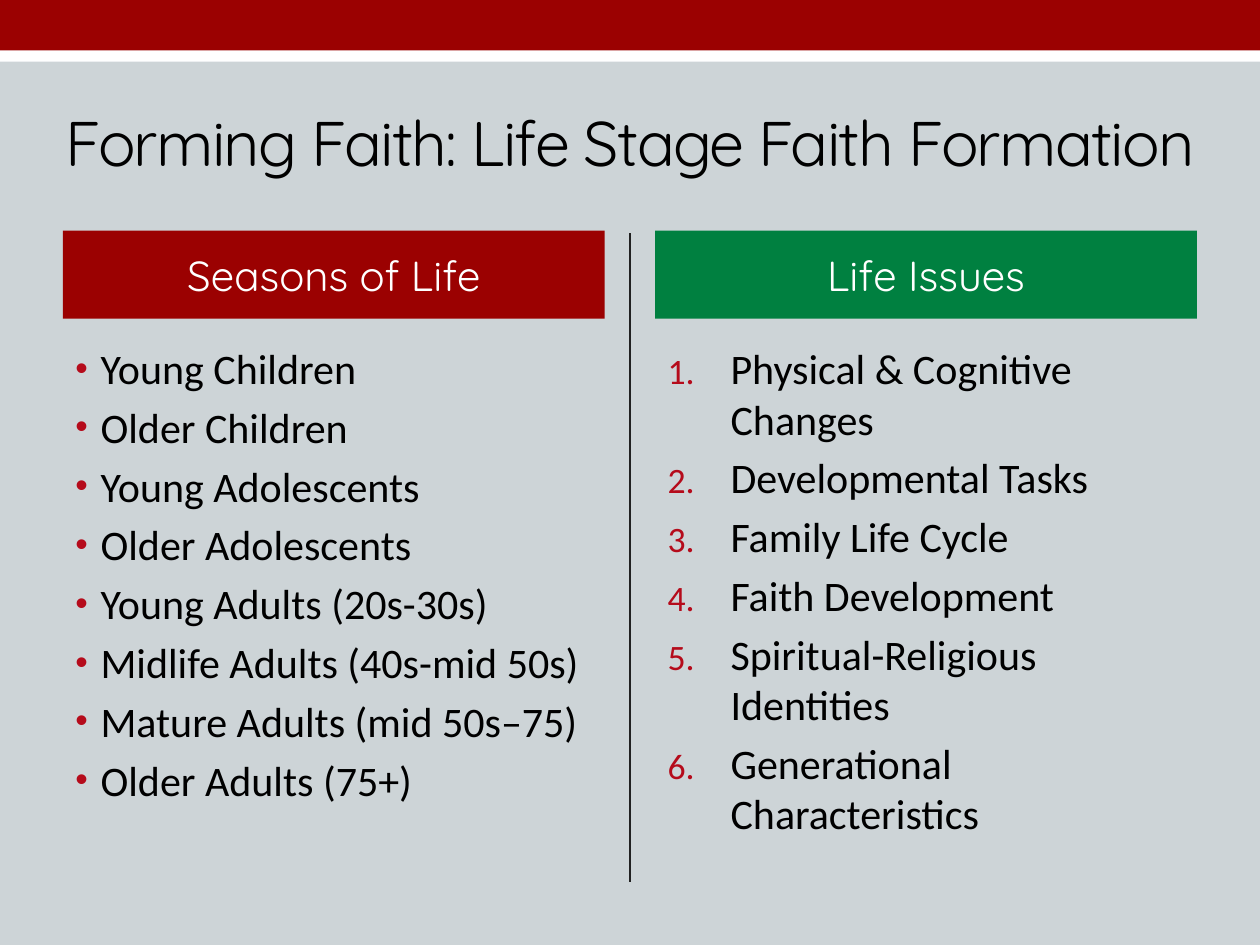
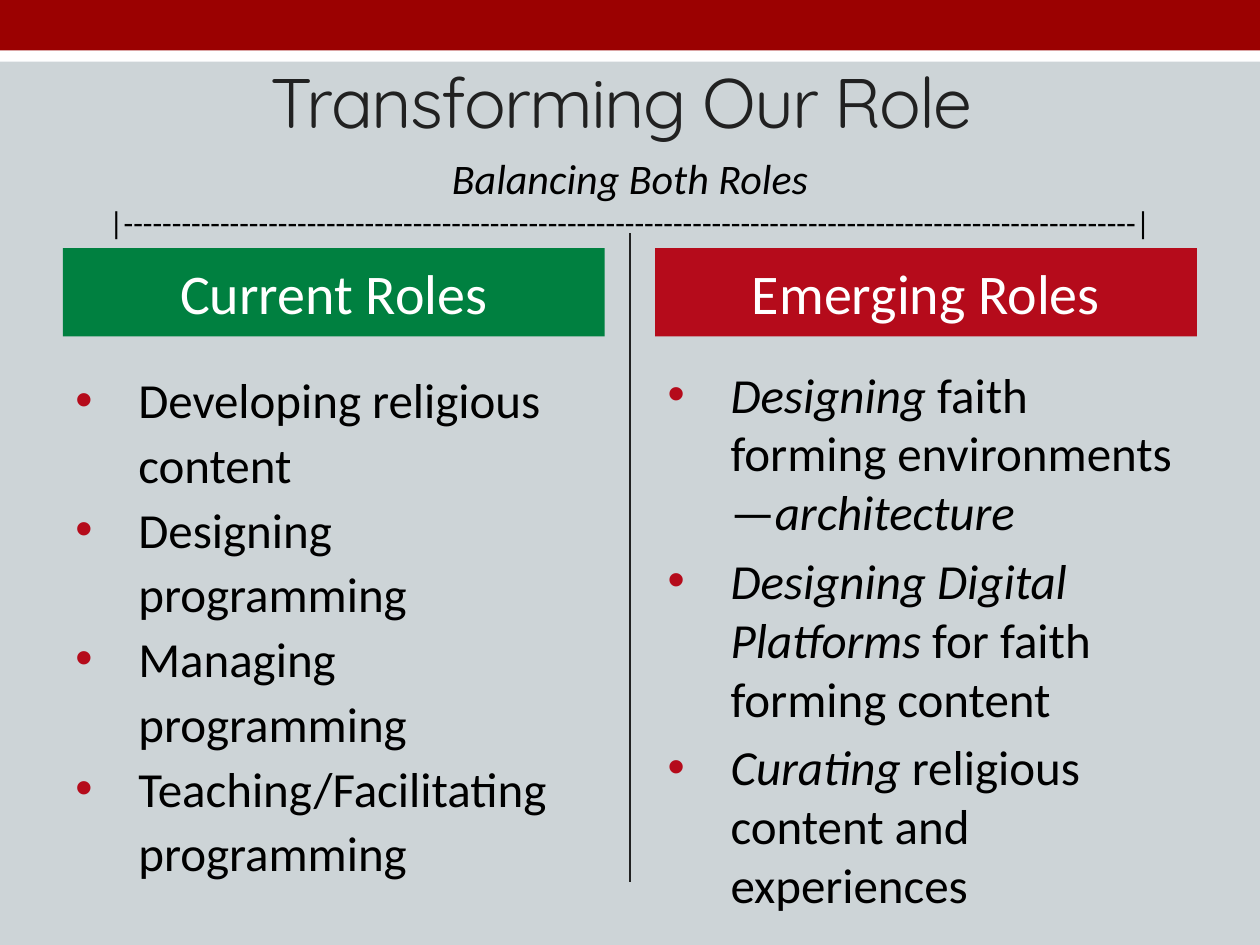
from pptx import Presentation
from pptx.dml.color import RGBColor
from pptx.enum.shapes import MSO_CONNECTOR, MSO_SHAPE
from pptx.enum.text import MSO_ANCHOR, PP_ALIGN
from pptx.oxml.ns import qn
from pptx.util import Inches, Pt
from lxml.etree import SubElement

# Shared look
COLORS = {"page": "CDD4D7", "white": "FFFFFF", "black": "000000", "ink": "212121",
          "maroon": "9B0101", "red": "B50B1B", "green": "008040"}
DISPLAY, BODY = "Quicksand", "Calibri"
WIDTH, HEIGHT = 10, 7.5
MARGIN, GUTTER = 0.5, 0.4
COLUMN = (WIDTH - 2 * MARGIN - GUTTER) / 2
HEADING_H, LIST_H = 0.7, 4.32
BANDS = [(0.24, 0.25, "white"), (0, 0.4, "maroon")]  # top, height, colour
DIVIDER = (1.85, 7)

# Content: *asterisks* mark italic words
SLIDES = [
    {
        "title": ("Forming Faith: Life Stage Faith Formation", 36, "black", 0.58),
        "heading_style": (DISPLAY, 24),
        "heading_top": 1.83, "list_top": 2.67, "list_size": 24, "bullet_pct": 85,
        "columns": [
            {"heading": "Seasons of Life", "fill": "maroon", "indent": 0.2,
             "items": ["Young Children", "Older Children", "Young Adolescents",
                       "Older Adolescents", "Young Adults (20s-30s)",
                       "Midlife Adults (40s-mid 50s)", "Mature Adults (mid 50s–75)",
                       "Older Adults (75+)"]},
            {"heading": "Life Issues", "fill": "green", "numbered": True, "extra": 0.1,
             "items": ["Physical & Cognitive Changes", "Developmental Tasks",
                       "Family Life Cycle", "Faith Development",
                       "Spiritual-Religious Identities", "Generational Characteristics"]},
        ],
    },
    {
        "title": ("Transforming Our Role ", 40, "ink", 0.26),
        "heading_style": (BODY, 32),
        "heading_top": 1.97, "list_top": 2.84, "list_size": 28, "bullet_pct": 100,
        "columns": [
            {"heading": "Current Roles", "fill": "green", "spacing": 1.1,
             "items": ["Developing religious content", "Designing programming",
                       "Managing programming", "Teaching/Facilitating programming"]},
            {"heading": "Emerging Roles", "fill": "red",
             "items": ["*Designing* faith forming environments—*architecture*",
                       "*Designing Digital Platforms* for faith forming content",
                       "*Curating* religious content and experiences"]},
        ],
        "balance": [("*Balancing Both Roles*", 24), ("|" + "-" * 105 + "|", 18)],
    },
]


def rgb(name):
    return RGBColor.from_string(COLORS[name])


def apply(target, values):
    for key, value in values.items():
        setattr(target, key, value)


def add_band(slide, left, top, width, height, fill):
    band = slide.shapes.add_shape(MSO_SHAPE.RECTANGLE, *map(Inches, (left, top, width, height)))
    band.shadow.inherit = False
    band.fill.solid()
    band.fill.fore_color.rgb = rgb(fill)
    band.line.fill.background()
    return band


def add_text(slide, *box):
    frame = slide.shapes.add_textbox(*map(Inches, box)).text_frame
    frame.word_wrap = True
    return frame


def write(paragraph, text, font, size, color, **layout):
    apply(paragraph, layout)
    for number, part in enumerate(text.split("*")):
        if part:
            run = paragraph.add_run()
            run.text = part
            apply(run.font, {"name": font, "size": Pt(size), "italic": number % 2 == 1})
            run.font.color.rgb = rgb(color)


def paragraphs(frame, count):
    return [frame.paragraphs[0]] + [frame.add_paragraph() for _ in range(count - 1)]


def add_bullet(paragraph, indent, percent, numbered):
    props = paragraph._p.get_or_add_pPr()
    props.set("marL", str(Inches(indent)))
    props.set("indent", str(-Inches(indent)))
    SubElement(SubElement(props, qn("a:buClr")), qn("a:srgbClr"), val=COLORS["red"])
    SubElement(props, qn("a:buSzPct"), val=str(percent * 1000))
    if numbered:
        SubElement(props, qn("a:buAutoNum"), type="arabicPeriod")
    else:
        SubElement(props, qn("a:buFont"), typeface="Arial")
        SubElement(props, qn("a:buChar"), char="•")


def add_frame(slide, text, size, color, top):
    # Bands, divider and title
    for band_top, height, fill in BANDS:
        add_band(slide, 0, band_top, WIDTH, height, fill)
    start, end = DIVIDER
    divider = slide.shapes.add_connector(
        MSO_CONNECTOR.STRAIGHT, *map(Inches, (WIDTH / 2, start, WIDTH / 2, end)))
    divider.line.color.rgb = rgb("ink")
    divider.line.width = Pt(1.5)
    SubElement(divider._element.spPr, qn("a:effectLst"))
    title = add_text(slide, 0, top, WIDTH, 1.08)
    title.vertical_anchor = MSO_ANCHOR.MIDDLE
    write(title.paragraphs[0], text, DISPLAY, size, color, alignment=PP_ALIGN.CENTER)
    for run in title.paragraphs[0].runs:
        run.font._element.set("spc", "-100")


def add_column(slide, page, column, left):
    # Coloured heading
    heading = add_band(slide, left, page["heading_top"], COLUMN, HEADING_H, column["fill"]).text_frame
    apply(heading, {"word_wrap": True, "vertical_anchor": MSO_ANCHOR.MIDDLE})
    write(heading.paragraphs[0], column["heading"], *page["heading_style"], "white",
          alignment=PP_ALIGN.CENTER)
    # List below it
    items, size = column["items"], page["list_size"]
    listing = add_text(slide, left, page["list_top"], COLUMN + column.get("extra", 0), LIST_H)
    for number, (paragraph, item) in enumerate(zip(paragraphs(listing, len(items)), items)):
        add_bullet(paragraph, column.get("indent", 0.5), page["bullet_pct"],
                   column.get("numbered", False))
        layout = {}
        if "spacing" in column:
            layout["line_spacing"] = column["spacing"]
        elif number:
            layout["space_before"] = Pt(0.2 * size)
        write(paragraph, item, BODY, size, "black", **layout)


def main():
    deck = Presentation()
    apply(deck, {"slide_width": Inches(WIDTH), "slide_height": Inches(HEIGHT)})
    for page in SLIDES:
        slide = deck.slides.add_slide(deck.slide_layouts[6])
        slide.background.fill.solid()
        slide.background.fill.fore_color.rgb = rgb("page")
        add_frame(slide, *page["title"])
        for number, column in enumerate(page["columns"]):
            add_column(slide, page, column, MARGIN + number * (COLUMN + GUTTER))
        # Span over both columns
        if "balance" in page:
            balance = add_text(slide, MARGIN, 1.16, WIDTH - 2 * MARGIN, 0.81)
            rows = page["balance"]
            for paragraph, (text, size) in zip(paragraphs(balance, len(rows)), rows):
                write(paragraph, text, BODY, size, "black", alignment=PP_ALIGN.CENTER)
    deck.save("out.pptx")


if __name__ == "__main__":
    main()
